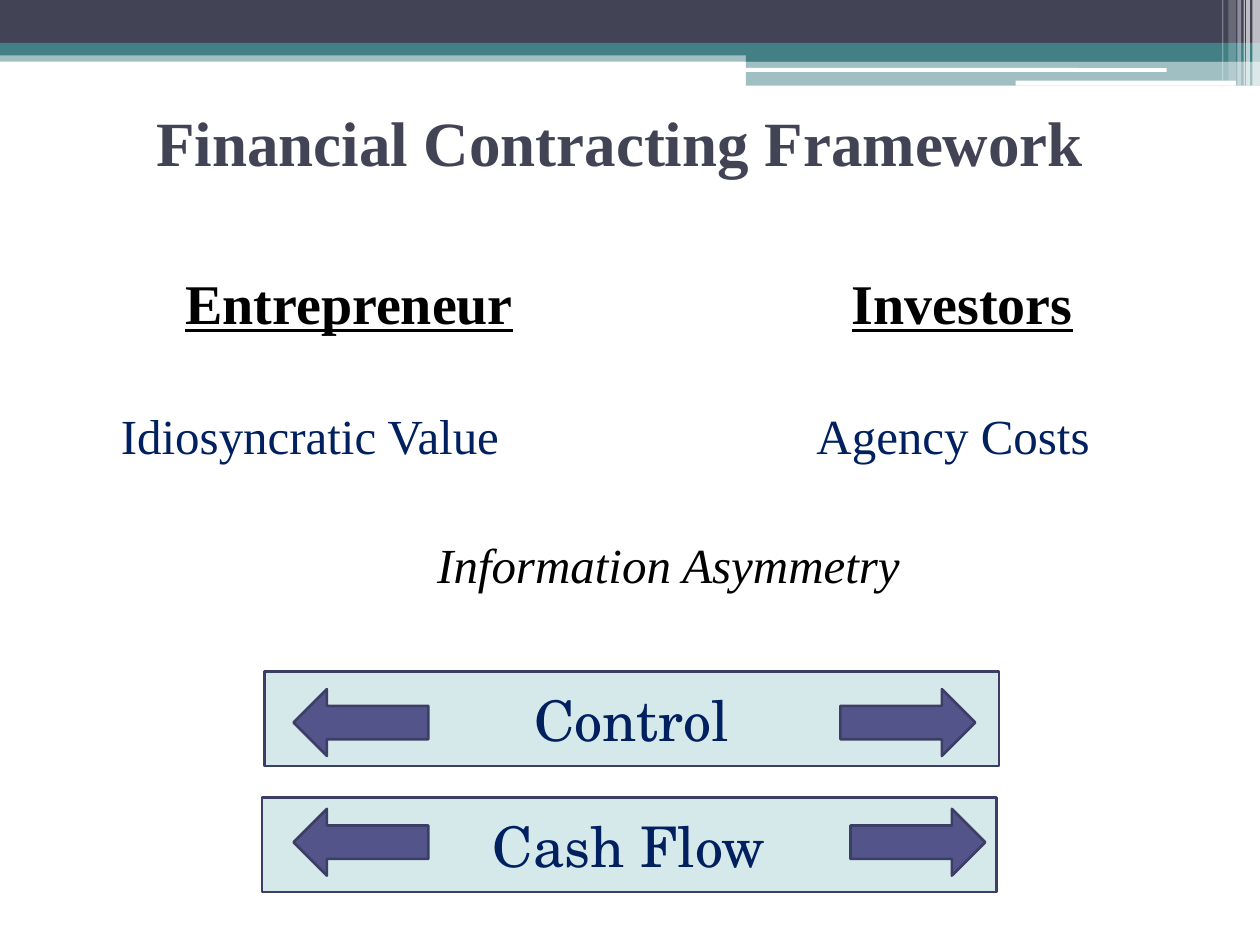
import lxml.etree
import pptx
import pptx.dml.color
import pptx.enum.shapes
import pptx.enum.text
import pptx.oxml.ns
import pptx.util

Inches = pptx.util.Inches
Pt = pptx.util.Pt
SHAPE = pptx.enum.shapes.MSO_SHAPE
ALIGN = pptx.enum.text.PP_ALIGN
ANCHOR = pptx.enum.text.MSO_ANCHOR

SLATE, TEAL, WHITE, BLACK = "424456", "438086", "FFFFFF", "000000"
NAVY, PALE, PURPLE, OUTLINE = "002060", "D6E9EA", "53548A", "3D3E66"
SERIF, SCHOOL = "Times New Roman", "TeX Gyre Schola"

BANDS = [
    (0, 0.4, 10, 0.09, TEAL, 50),
    (0, 0, 10, 0.34, SLATE, 100),
    (0, 0.34, 10, 0.1, TEAL, 100),
    (5.92, 0.39, 4.08, 0.1, TEAL, 100),
    (5.92, 0.48, 4.08, 0.2, TEAL, 50),
]
HIGHLIGHTS = [(5.91, 0.54, 3.35, 0.03), (8.06, 0.64, 1.75, 0.04)]
STRIPES = [
    (9.94, 0.06, 0.68, 65),
    (9.89, 0.03, 0.68, 65),
    (9.87, 0.01, 0.68, 60),
    (9.82, 0.03, 0.68, 40),
    (9.75, 0.06, 0.64, 20),
    (9.7, 0.01, 0.64, 30),
]


def color(value):
    """Return the colour for a hex string."""
    return pptx.dml.color.RGBColor.from_string(value)


def add_element(parent, tag, **attributes):
    """Append a DrawingML element to a parent."""
    element = lxml.etree.SubElement(parent, pptx.oxml.ns.qn(tag))
    for name, value in attributes.items():
        element.set(name, str(value))


def set_font(font, name, size, value, bold=False, italic=False, underline=False):
    """Set the typeface, size, colour and style of a font."""
    font.name, font.size = name, Pt(size)
    font.bold, font.italic, font.underline = bold, italic, underline
    font.color.rgb = color(value)


def add_shape(slide, kind, left, top, width, height, fill, line=None, opacity=100):
    """Add a flat preset shape with an optional outline and transparency."""
    shape = slide.shapes.add_shape(
        kind, Inches(left), Inches(top), Inches(width), Inches(height))
    shape.shadow.inherit = False
    shape.fill.solid()
    shape.fill.fore_color.rgb = color(fill)
    if opacity < 100:
        solid = shape.fill._xPr.find(pptx.oxml.ns.qn("a:solidFill"))
        add_element(solid[0], "a:alpha", val=opacity * 1000)
    if line:
        shape.line.color.rgb = color(line)
        shape.line.width = Pt(1.5)
    else:
        shape.line.fill.background()
    return shape


def add_header(slide):
    """Add the bands, highlights and stripes along the top edge."""
    for left, top, width, height, fill, opacity in BANDS:
        add_shape(slide, SHAPE.RECTANGLE, left, top, width, height, fill, opacity=opacity)
    for box in HIGHLIGHTS:
        add_shape(slide, SHAPE.ROUNDED_RECTANGLE, *box, WHITE)
    for left, width, height, opacity in STRIPES:
        add_shape(slide, SHAPE.RECTANGLE, left, 0, width, height, WHITE, opacity=opacity)


def place(shape, left, top, width, height):
    """Move and size a placeholder and keep its text size fixed."""
    shape.left, shape.top = Inches(left), Inches(top)
    shape.width, shape.height = Inches(width), Inches(height)
    shape.text_frame.auto_size = pptx.enum.text.MSO_AUTO_SIZE.NONE


def fill_title(shape, text):
    """Write the centred slide title."""
    place(shape, 0.42, 0.58, 9, 1.08)
    shape.text_frame.vertical_anchor = ANCHOR.MIDDLE
    paragraph = shape.text_frame.paragraphs[0]
    paragraph.text = text
    paragraph.alignment = ALIGN.CENTER
    set_font(paragraph.font, SERIF, 36, SLATE, bold=True)


def write_line(paragraph, text, indent, space, size, value, **style):
    """Write an indented line without a bullet."""
    paragraph.text = text
    paragraph.space_before = Pt(space)
    properties = paragraph._p.get_or_add_pPr()
    properties.set("marL", str(Inches(indent)))
    properties.set("indent", "0")
    add_element(properties, "a:buNone")
    set_font(paragraph.font, SERIF, size, value, **style)


def fill_party(shape, box, heading, heading_indent, concern, concern_indent):
    """Write one party as a heading with its concern below."""
    place(shape, *box)
    frame = shape.text_frame
    write_line(frame.paragraphs[0], heading, heading_indent, 3, 32, BLACK,
               bold=True, underline=True)
    write_line(frame.add_paragraph(), concern, concern_indent, 40, 28, NAVY)


def add_arrow_bar(slide, text, left, top, arrow_top, right_arrow_left):
    """Add a labelled bar with an arrow towards each party."""
    bar = add_shape(slide, SHAPE.RECTANGLE, left, top, 5.83, 0.75, PALE, OUTLINE)
    bar.text_frame.vertical_anchor = ANCHOR.MIDDLE
    paragraph = bar.text_frame.paragraphs[0]
    paragraph.text = text
    paragraph.alignment = ALIGN.CENTER
    set_font(paragraph.font, SCHOOL, 32, NAVY)
    for kind, arrow_left in ((SHAPE.LEFT_ARROW, 2.33), (SHAPE.RIGHT_ARROW, right_arrow_left)):
        add_shape(slide, kind, arrow_left, arrow_top, 1.07, 0.53, PURPLE, OUTLINE)


def main():
    """Build the slide and save it."""
    presentation = pptx.Presentation()
    presentation.slide_width, presentation.slide_height = Inches(10), Inches(7.5)
    slide = presentation.slides.add_slide(presentation.slide_layouts[3])
    add_header(slide)
    fill_title(slide.shapes.title, "Financial Contracting Framework")
    left_body, right_body = slide.placeholders[1], slide.placeholders[2]
    fill_party(left_body, (0.25, 2.08, 7.25, 5.11),
               "Entrepreneur", 1.12, "Idiosyncratic Value", 0.61)
    write_line(left_body.text_frame.add_paragraph(), "Information Asymmetry",
               3.12, 40, 28, BLACK, italic=True)
    fill_party(right_body, (6.13, 2.08, 3.37, 1.9),
               "Investors", 0.53, "Agency Costs", 0.25)
    add_arrow_bar(slide, "Control", 2.1, 5.33, 5.47, 6.67)
    add_arrow_bar(slide, "Cash Flow", 2.08, 6.33, 6.42, 6.75)
    presentation.save("out.pptx")


if __name__ == "__main__":
    main()
